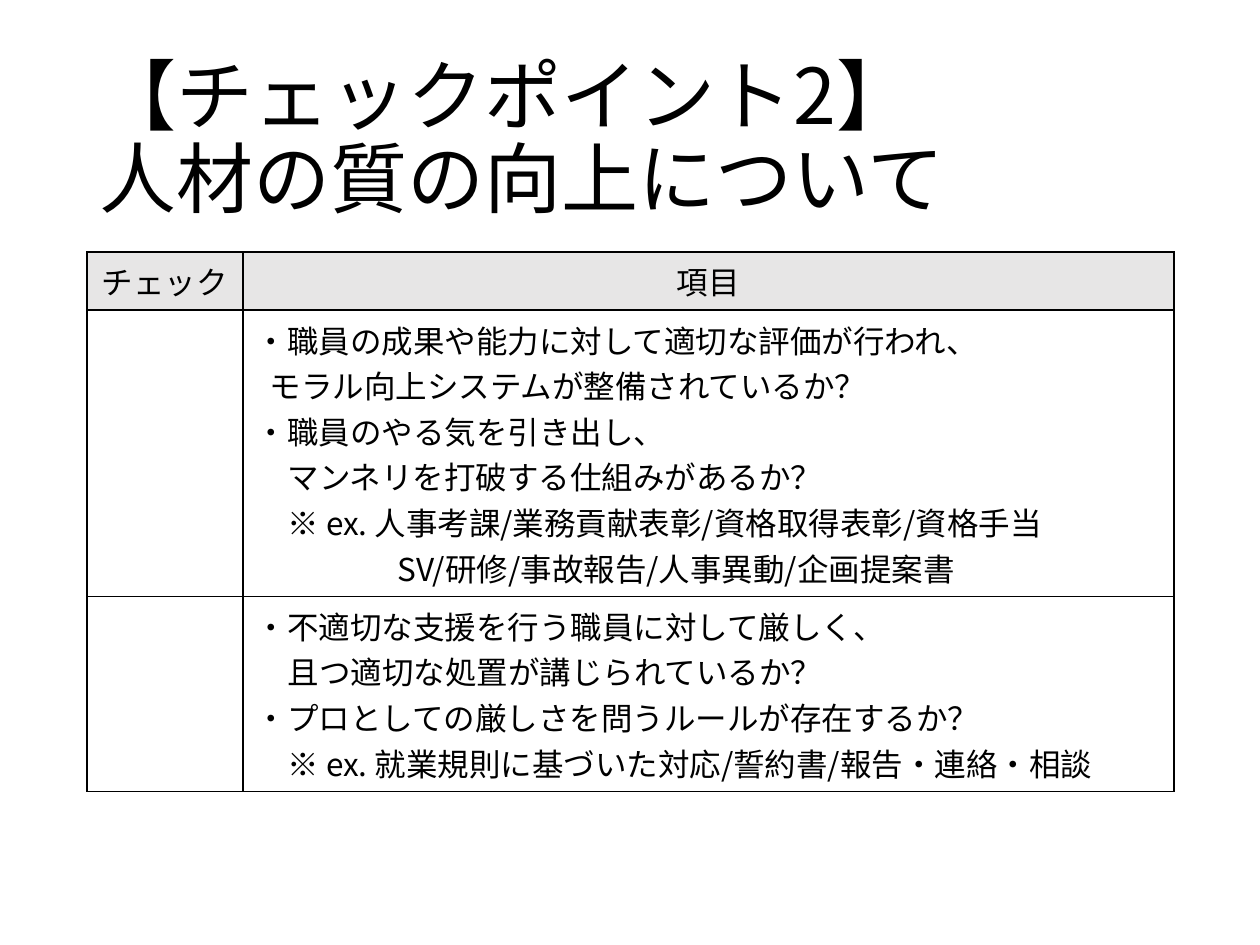
from dataclasses import dataclass

import lxml.etree
import pptx
import pptx.dml.color
import pptx.enum.text
import pptx.oxml.ns
import pptx.util

EMU_PER_PX = 914400 / 126


@dataclass(frozen=True)
class Theme:
    font: str = "Noto Sans CJK JP"
    text: str = "000000"
    border: str = "000000"
    header_fill: str = "E7E6E6"
    body_fill: str = "FFFFFF"
    title_size: int = 44
    body_size: int = 18
    border_width: int = 1


@dataclass(frozen=True)
class Line:
    text: str
    indent: int = 0


@dataclass(frozen=True)
class CheckRow:
    height: int
    lines: tuple[Line, ...]


THEME = Theme()
ALIGN = pptx.enum.text.PP_ALIGN
ANCHOR = pptx.enum.text.MSO_ANCHOR
FULL_WIDTH = 32  # one character of body text

TITLE_LINES = ("【チェックポイント2】", "人材の質の向上について")
HEADINGS = ("チェック", "項目")
HEADER_HEIGHT = 58
COLUMN_WIDTHS = (156, 931)
CHECK_ROWS = (
    CheckRow(286, (
        Line("・職員の成果や能力に対して適切な評価が行われ、"),
        Line("モラル向上システムが整備されているか？", 14),
        Line("・職員のやる気を引き出し、"),
        Line("マンネリを打破する仕組みがあるか？", FULL_WIDTH),
        Line("※ ex. 人事考課/業務貢献表彰/資格取得表彰/資格手当", FULL_WIDTH),
        Line("SV/研修/事故報告/人事異動/企画提案書", 142),
    )),
    CheckRow(195, (
        Line("・不適切な支援を行う職員に対して厳しく、"),
        Line("且つ適切な処置が講じられているか？", FULL_WIDTH),
        Line("・プロとしての厳しさを問うルールが存在するか？"),
        Line("※ ex. 就業規則に基づいた対応/誓約書/報告・連絡・相談", FULL_WIDTH),
    )),
)


def px(length: int) -> pptx.util.Emu:
    return pptx.util.Emu(round(length * EMU_PER_PX))


def add_run(paragraph, text: str, size: int) -> None:
    run = paragraph.add_run()
    run.text = text
    run.font.size = pptx.util.Pt(size)
    run.font.bold = False
    run.font.name = THEME.font
    run.font.color.rgb = pptx.dml.color.RGBColor.from_string(THEME.text)
    # East Asian text takes its own typeface
    properties = run.font._element
    lxml.etree.SubElement(properties, pptx.oxml.ns.qn("a:ea"), typeface=THEME.font)


def style_cell(cell, fill: str) -> None:
    properties = cell._tc.get_or_add_tcPr()
    for side in ("lnL", "lnR", "lnT", "lnB"):
        border = lxml.etree.SubElement(
            properties, pptx.oxml.ns.qn(f"a:{side}"),
            w=str(pptx.util.Pt(THEME.border_width)))
        solid = lxml.etree.SubElement(border, pptx.oxml.ns.qn("a:solidFill"))
        lxml.etree.SubElement(solid, pptx.oxml.ns.qn("a:srgbClr"), val=THEME.border)
    cell.fill.solid()
    cell.fill.fore_color.rgb = pptx.dml.color.RGBColor.from_string(fill)


def fill_cell(cell, lines: tuple[Line, ...], alignment: ALIGN) -> None:
    for index, line in enumerate(lines):
        frame = cell.text_frame
        paragraph = frame.add_paragraph() if index else frame.paragraphs[0]
        paragraph.alignment = alignment
        if line.indent:
            paragraph._p.get_or_add_pPr().set("marL", str(px(line.indent)))
        add_run(paragraph, line.text, THEME.body_size)


def format_title(title) -> None:
    title.left, title.top, title.width, title.height = map(px, (87, 50, 1086, 183))
    frame = title.text_frame
    frame.word_wrap = True
    frame.auto_size = pptx.enum.text.MSO_AUTO_SIZE.NONE
    frame.vertical_anchor = ANCHOR.MIDDLE
    paragraph = frame.paragraphs[0]
    paragraph.alignment = ALIGN.LEFT
    paragraph.line_spacing = 0.9
    for index, text in enumerate(TITLE_LINES):
        if index:
            paragraph.add_line_break()
        add_run(paragraph, text, THEME.title_size)


def add_check_table(slide) -> None:
    heights = (HEADER_HEIGHT, *(row.height for row in CHECK_ROWS))
    table = slide.shapes.add_table(
        len(heights), len(COLUMN_WIDTHS), px(87), px(252),
        px(sum(COLUMN_WIDTHS)), px(sum(heights))).table
    table.first_row = False
    table.horz_banding = False
    for column, width in zip(table.columns, COLUMN_WIDTHS):
        column.width = px(width)
    for index, height in enumerate(heights):
        table.rows[index].height = px(height)
        for cell in table.rows[index].cells:
            style_cell(cell, THEME.body_fill if index else THEME.header_fill)

    # Header row
    for cell, heading in zip(table.rows[0].cells, HEADINGS):
        cell.vertical_anchor = ANCHOR.MIDDLE
        fill_cell(cell, (Line(heading),), ALIGN.CENTER)

    # Check items; the check column stays open for marking
    for index, row in enumerate(CHECK_ROWS, start=1):
        fill_cell(table.cell(index, 1), row.lines, ALIGN.LEFT)


def main() -> None:
    presentation = pptx.Presentation()
    presentation.slide_width = px(1260)
    presentation.slide_height = px(945)
    slide = presentation.slides.add_slide(presentation.slide_layouts[5])
    format_title(slide.shapes.title)
    add_check_table(slide)
    presentation.save("out.pptx")


if __name__ == "__main__":
    main()
